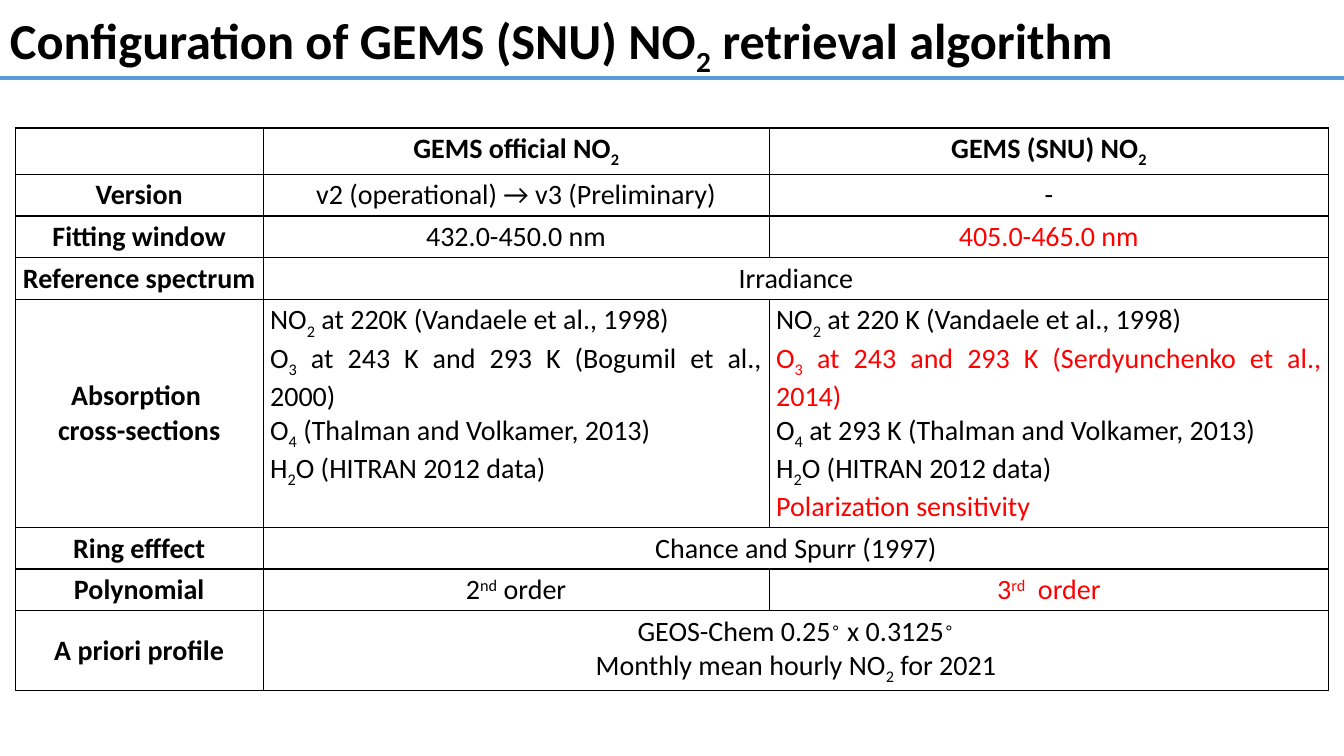
from lxml import etree
from pptx import Presentation
from pptx.dml.color import RGBColor
from pptx.enum.shapes import MSO_CONNECTOR
from pptx.enum.text import MSO_ANCHOR, PP_ALIGN
from pptx.oxml.ns import qn
from pptx.util import Inches, Pt

CENTER, JUSTIFY = PP_ALIGN.CENTER, PP_ALIGN.JUSTIFY
TOP, MIDDLE = MSO_ANCHOR.TOP, MSO_ANCHOR.MIDDLE
STRAIGHT = MSO_CONNECTOR.STRAIGHT
BLACK, RED, WHITE, BLUE = "000000", "FF0000", "FFFFFF", "5B9BD5"

# "|" encloses sub- and superscripts, a leading "*" makes a paragraph red
TITLE = "Configuration of GEMS (SNU) NO|2| retrieval algorithm"
# A row with two cells spans the second one over both products
ROWS = [
    ["", "GEMS official NO|2|", "GEMS (SNU) NO|2|"],
    ["Version", "v2 (operational) → v3 (Preliminary)", "-"],
    ["Fitting window", "432.0-450.0 nm", "*405.0-465.0 nm"],
    ["Reference spectrum", "Irradiance"],
    ["Absorption \ncross-sections",
     "NO|2| at 220K (Vandaele et al., 1998)\n"
     "O|3| at 243 K and 293 K (Bogumil et al., 2000)\n"
     "O|4| (Thalman and Volkamer, 2013)\n"
     "H|2|O (HITRAN 2012 data)",
     "NO|2| at 220 K (Vandaele et al., 1998)\n"
     "*O|3| at 243 and 293 K (Serdyunchenko et al., 2014)\n"
     "O|4| at 293 K (Thalman and Volkamer, 2013)\n"
     "H|2|O (HITRAN 2012 data)\n"
     "*Polarization sensitivity"],
    ["Ring efffect", "Chance and Spurr (1997)"],
    ["Polynomial", "2|nd| order", "*3|rd|  order"],
    ["A priori profile",
     "GEOS-Chem 0.25|∘| x 0.3125|∘|\nMonthly mean hourly NO|2| for 2021"],
]
# Shares of the slide, in percent
COLUMN_WIDTHS = [18.45, 37.65, 41.63]
ROW_HEIGHTS = [5.07, 5.33, 5.07, 5.07, 27.6, 5.2, 5.07, 9.2]


def rgb(value):
    return RGBColor.from_string(value)


class Deck:
    """Slide builder; all lengths are percentages of the slide's size."""
    font = "Calibri"

    def __init__(self):
        self.prs = Presentation()
        self.prs.slide_width, self.prs.slide_height = Inches(13.33), Inches(7.5)
        self.s = self.prs.slides.add_slide(self.prs.slide_layouts[6])

    def x(self, share):
        return int(self.prs.slide_width * share / 100)

    def y(self, share):
        return int(self.prs.slide_height * share / 100)

    def text(self, tf, text, size, bold=False, align=None, spacing=None):
        for i, line in enumerate(text.split("\n")):
            p = tf.add_paragraph() if i else tf.paragraphs[0]
            p.alignment, p.line_spacing = align, spacing
            p.font.name, p.font.size, p.font.bold = self.font, Pt(size), bold
            p.font.color.rgb = rgb(RED if line.startswith("*") else BLACK)
            for j, part in enumerate(line.removeprefix("*").split("|")):
                if not part:
                    continue
                r = p.add_run()
                r.text = part
                if j % 2:
                    shift = "-25000" if part.isdigit() else "30000"
                    r._r.get_or_add_rPr().set("baseline", shift)

    def title(self, text, left, top, width, height):
        sp = self.s.shapes.add_textbox(self.x(left), self.y(top),
                                       self.x(width), self.y(height))
        tf = sp.text_frame
        tf.word_wrap, tf.vertical_anchor = True, MIDDLE
        self.text(tf, text, 36, bold=True, spacing=0.9)

    def rule(self, top, color, weight):
        sp = self.s.shapes.add_connector(STRAIGHT, 0, self.y(top),
                                         self.x(100), self.y(top))
        sp.line.color.rgb, sp.line.width = rgb(color), Pt(weight)
        etree.SubElement(sp._element.spPr, qn("a:effectLst"))

    def borders(self, cell):
        tc_pr = cell._tc.get_or_add_tcPr()
        for i, side in enumerate(("a:lnL", "a:lnR", "a:lnT", "a:lnB")):
            ln = etree.Element(qn(side), w=str(Pt(1)))
            fill = etree.SubElement(ln, qn("a:solidFill"))
            etree.SubElement(fill, qn("a:srgbClr"), val=BLACK)
            tc_pr.insert(i, ln)

    def cell(self, cell, text, bold, align, anchor):
        cell.margin_left = cell.margin_right = Inches(0.07)
        cell.margin_top = cell.margin_bottom = Inches(0.04)
        cell.vertical_anchor = anchor
        self.text(cell.text_frame, text, 20, bold, align)

    def table(self, rows, left, top, widths, heights):
        tbl = self.s.shapes.add_table(
            len(heights), len(widths), self.x(left), self.y(top),
            self.x(sum(widths)), self.y(sum(heights))).table
        tbl.first_row = tbl.horz_banding = False
        for column, width in zip(tbl.columns, widths):
            column.width = self.x(width)
        for row, height in zip(tbl.rows, heights):
            row.height = self.y(height)
        for cell in tbl.iter_cells():
            cell.fill.solid()
            cell.fill.fore_color.rgb = rgb(WHITE)
            self.borders(cell)
        for i, texts in enumerate(rows):
            spanned = len(texts) < len(widths)
            if spanned:
                tbl.cell(i, 1).merge(tbl.cell(i, len(widths) - 1))
            for j, text in enumerate(texts):
                listing = j > 0 and not spanned and "\n" in text
                self.cell(tbl.cell(i, j), text, i == 0 or j == 0,
                          JUSTIFY if listing else CENTER,
                          MIDDLE if i and (j == 0 or spanned) else TOP)


def main():
    deck = Deck()
    # Heading
    deck.title(TITLE, 0, -0.53, 86.25, 12)
    deck.rule(10.27, BLUE, 3)
    # Comparison of the two products
    deck.table(ROWS, 1.13, 16.93, COLUMN_WIDTHS, ROW_HEIGHTS)
    deck.prs.save("out.pptx")


if __name__ == "__main__":
    main()
